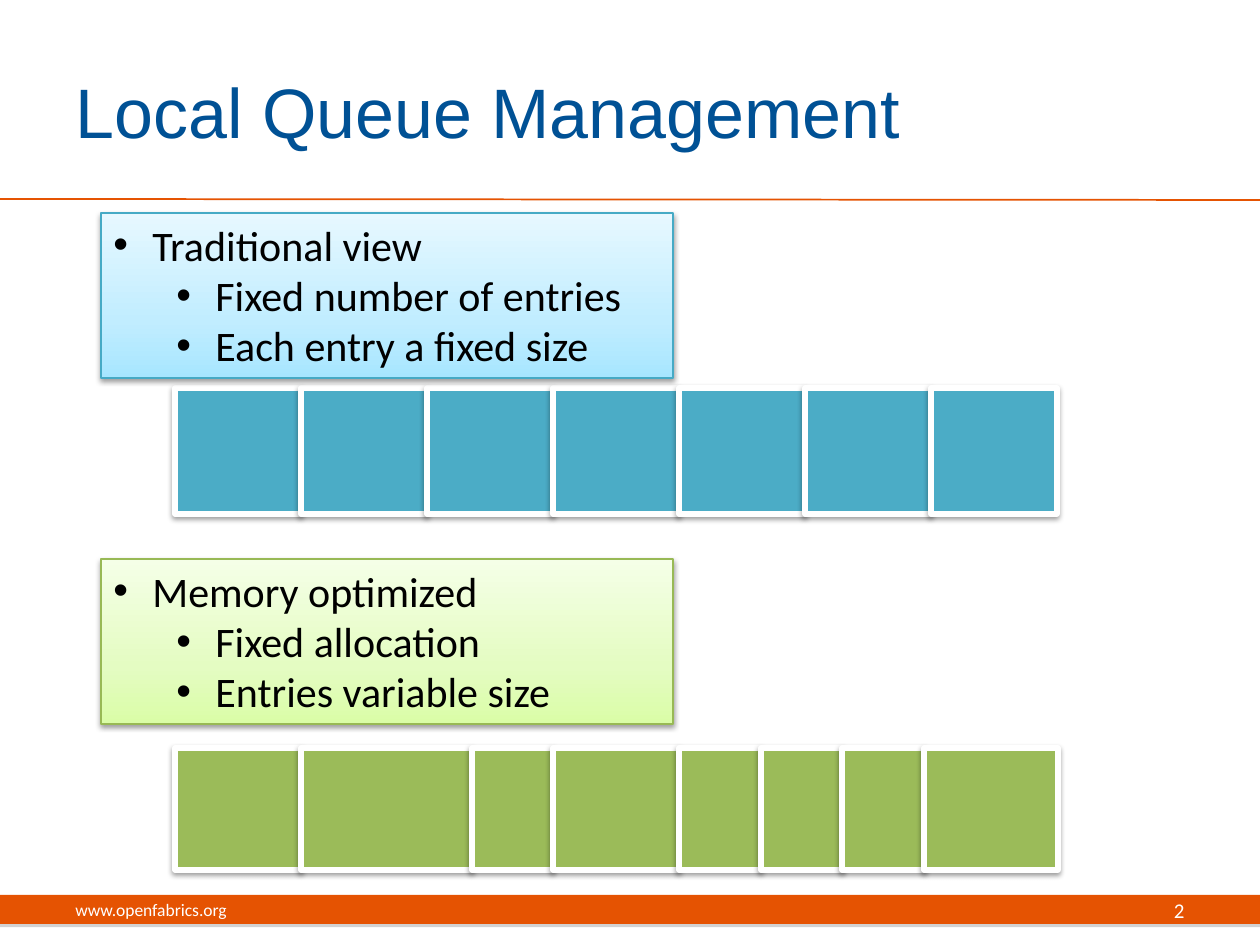
"""Build the slide on local queue management."""
from copy import deepcopy
from itertools import accumulate

from lxml import etree
from pptx import Presentation
from pptx import util as u
from pptx.dml.color import RGBColor
from pptx.enum import shapes, text
from pptx.oxml.ns import qn

ORANGE = RGBColor(0xE5, 0x53, 0x02)
NAVY = RGBColor(0x00, 0x51, 0x95)
WHITE = RGBColor(0xFF, 0xFF, 0xFF)
BLACK = RGBColor(0x00, 0x00, 0x00)
GRAY = RGBColor(0x80, 0x80, 0x80)
TEAL = RGBColor(0x4B, 0xAC, 0xC6)
TEAL_EDGE = RGBColor(0x46, 0xAA, 0xC5)
TEAL_FADE = [RGBColor(0xA7, 0xE6, 0xFF), RGBColor(0xC1, 0xED, 0xFF), RGBColor(0xE7, 0xF8, 0xFF)]
GREEN = RGBColor(0x9B, 0xBB, 0x59)
GREEN_EDGE = RGBColor(0x98, 0xB9, 0x55)
GREEN_FADE = [RGBColor(0xDA, 0xFD, 0xA7), RGBColor(0xE4, 0xFC, 0xC2), RGBColor(0xF5, 0xFF, 0xE7)]

TITLE = "Local Queue Management"
QUEUES = [
    {"points": [(0, "Traditional view"), (1, "Fixed number of entries"), (1, "Each entry a fixed size")],
     "top": 213, "fade": TEAL_FADE, "edge": TEAL_EDGE,
     "entries": [126] * 7, "entry_top": 388, "entry_height": 126, "entry_fill": TEAL},
    {"points": [(0, "Memory optimized"), (1, "Fixed allocation"), (1, "Entries variable size")],
     "top": 559, "fade": GREEN_FADE, "edge": GREEN_EDGE,
     "entries": [126, 171, 81, 126, 82, 81, 82, 134], "entry_top": 748, "entry_height": 122,
     "entry_fill": GREEN},
]
FOOTERS = [
    ("www.openfabrics.org", (63, 885, 399, 50), 10, text.PP_ALIGN.LEFT),
    ("2", (903, 885, 294, 50), 12, text.PP_ALIGN.RIGHT),
]
ENTRY_LEFT = 175
VIEW_LEFT, VIEW_WIDTH, VIEW_HEIGHT = 101, 572, 165
INDENT, LEVEL_STEP = 39, 63
FADE_POSITIONS = [0, 0.35, 1]
SOFT_SHADOW = (BLACK, 38, 3.1, 1.6)
BAR_SHADOW = (GRAY, 35, 0, 1.8)


def px(length):
    return round(length * 914400 / 126)


def apply_format(target, values):
    for name, value in values.items():
        setattr(target, name, value)


def set_font(font, size, color, face="Calibri"):
    apply_format(font, {"name": face, "size": u.Pt(size)})
    font.color.rgb = color


def add_box(slide, frame, shadow, fill=None, edge=None, edge_width=0):
    box = slide.shapes.add_shape(shapes.MSO_SHAPE.RECTANGLE, *map(px, frame))
    if fill is not None:
        box.fill.solid()
        box.fill.fore_color.rgb = fill
    if edge is None:
        box.line.fill.background()
    else:
        box.line.color.rgb = edge
        box.line.width = u.Pt(edge_width)
    box.shadow.inherit = False
    color, opacity, blur, distance = shadow
    effects = box._element.spPr.find(qn("a:effectLst"))
    outer = etree.SubElement(effects, qn("a:outerShdw"), blurRad=str(u.Pt(blur)),
                             dist=str(u.Pt(distance)), dir="5400000", rotWithShape="0")
    tint = etree.SubElement(outer, qn("a:srgbClr"), val=str(color))
    etree.SubElement(tint, qn("a:alpha"), val=str(opacity * 1000))
    return box


def set_fade(box, colors):
    box.fill.gradient()
    box.fill.gradient_angle = 90
    stops = box._element.spPr.find(".//" + qn("a:gsLst"))
    stops.insert(1, deepcopy(stops[0]))
    for stop, position, color in zip(box.fill.gradient_stops, FADE_POSITIONS, colors):
        stop.position = position
        stop.color.rgb = color


def add_points(frame, points):
    apply_format(frame, {"word_wrap": True, "vertical_anchor": text.MSO_ANCHOR.TOP,
                         "auto_size": text.MSO_AUTO_SIZE.SHAPE_TO_FIT_TEXT})
    for index, (level, wording) in enumerate(points):
        point = frame.add_paragraph() if index else frame.paragraphs[0]
        apply_format(point, {"text": wording, "level": level, "alignment": text.PP_ALIGN.LEFT})
        properties = point._p.get_or_add_pPr()
        properties.set("marL", str(px(INDENT + level * LEVEL_STEP)))
        properties.set("indent", str(px(-INDENT)))
        etree.SubElement(properties, qn("a:buFont"), typeface="Arial")
        etree.SubElement(properties, qn("a:buChar"), char="•")
        set_font(point.runs[0].font, 24, BLACK)


def add_queue(slide, queue):
    lefts = accumulate(queue["entries"], initial=ENTRY_LEFT)
    for left, width in zip(lefts, queue["entries"]):
        add_box(slide, (left, queue["entry_top"], width, queue["entry_height"]),
                SOFT_SHADOW, queue["entry_fill"], WHITE, 3)
    view = add_box(slide, (VIEW_LEFT, queue["top"], VIEW_WIDTH, VIEW_HEIGHT),
                   SOFT_SHADOW, edge=queue["edge"], edge_width=0.75)
    set_fade(view, queue["fade"])
    add_points(view.text_frame, queue["points"])


def add_footer(slide, wording, frame, size, alignment):
    footer = slide.shapes.add_textbox(*map(px, frame)).text_frame
    apply_format(footer, {"word_wrap": True, "vertical_anchor": text.MSO_ANCHOR.MIDDLE})
    apply_format(footer.paragraphs[0], {"text": wording, "alignment": alignment})
    set_font(footer.paragraphs[0].runs[0].font, size, WHITE)


def main():
    deck = Presentation()
    apply_format(deck, {"slide_width": px(1260), "slide_height": px(945)})
    slide = deck.slides.add_slide(deck.slide_layouts[5])

    title = slide.shapes.title
    apply_format(title, {"left": px(63), "top": px(32), "width": px(1029), "height": px(157)})
    apply_format(title.text_frame, {"text": TITLE, "vertical_anchor": text.MSO_ANCHOR.MIDDLE})
    heading = title.text_frame.paragraphs[0]
    heading.alignment = text.PP_ALIGN.LEFT
    set_font(heading.runs[0].font, 40, NAVY, "Arial")

    add_box(slide, (0, 895, 1260, 29), BAR_SHADOW, ORANGE)
    rule = slide.shapes.add_connector(shapes.MSO_CONNECTOR.STRAIGHT, *map(px, (0, 199, 1260, 200)))
    rule.line.color.rgb = ORANGE
    rule.line.width = u.Pt(1)
    etree.SubElement(rule._element.spPr, qn("a:effectLst"))

    for footer in FOOTERS:
        add_footer(slide, *footer)
    for queue in QUEUES:
        add_queue(slide, queue)
    deck.save("out.pptx")


if __name__ == "__main__":
    main()
